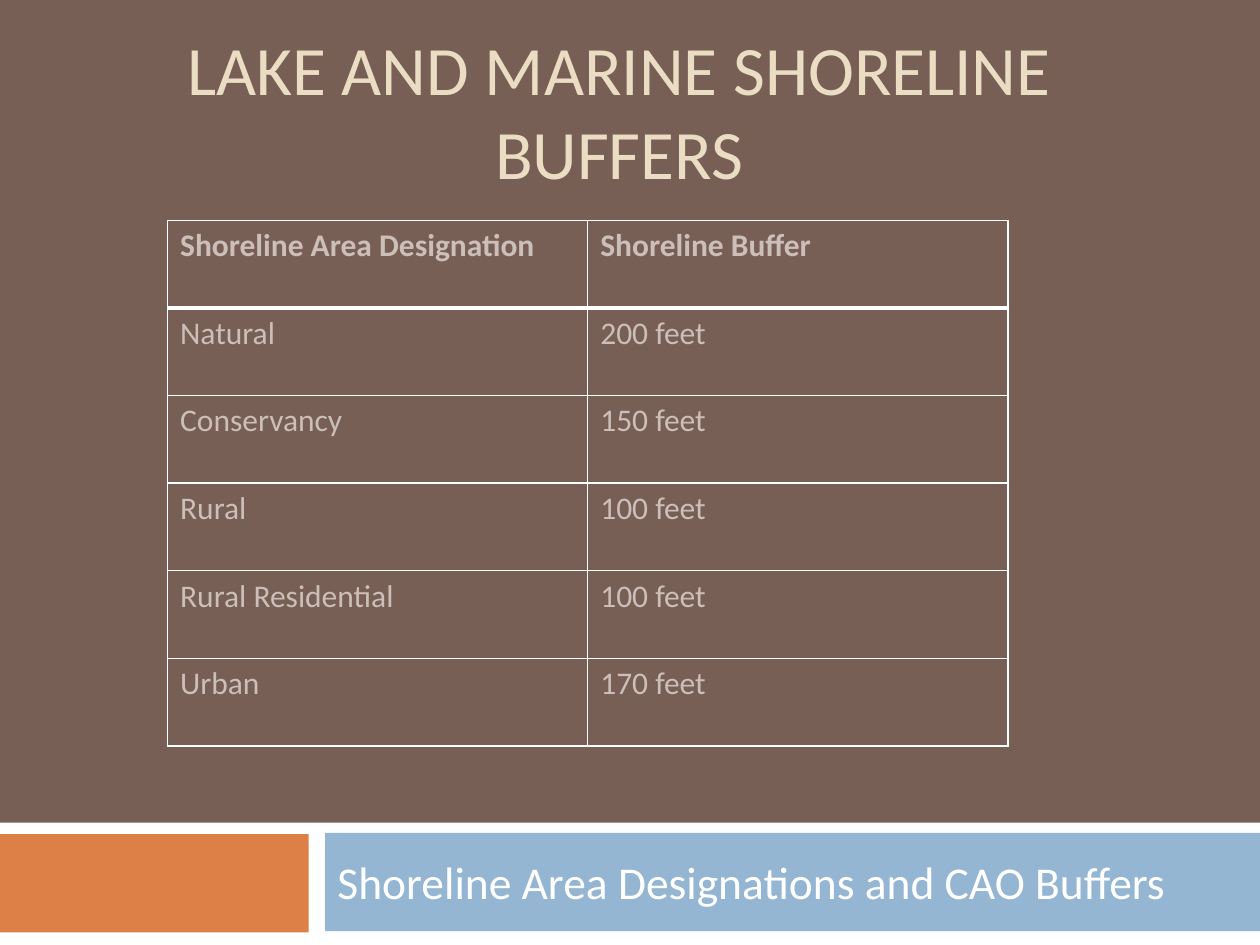
from lxml.etree import SubElement
from pptx import Presentation
from pptx.dml.color import RGBColor
from pptx.enum.shapes import MSO_SHAPE as Shape
from pptx.enum.text import MSO_ANCHOR as Anchor, PP_ALIGN as Align
from pptx.oxml.ns import qn
from pptx.util import Inches, Pt

WHITE = "FFFFFF"


def color(value):
    return RGBColor.from_string(value)


def write(frame, text, size, ink, bold=False):
    frame.word_wrap = True
    para = frame.paragraphs[0]
    para.text = text
    para.font.name = "Calibri"
    para.font.size = Pt(size)
    para.font.bold = bold
    para.font.color.rgb = color(ink)
    return para


deck = Presentation()
deck.slide_width, deck.slide_height = Inches(10), Inches(7.5)
page = deck.slides.add_slide(deck.slide_layouts[6])
page.background.fill.solid()
page.background.fill.fore_color.rgb = color("775F55")

bands = [
    (0, 6.53, 10, 0.97, WHITE),
    (-0.01, 6.62, 2.46, 0.78, "DD8047"),
    (2.58, 6.61, 7.42, 0.78, "94B6D2"),
]
for *place, paint in bands:
    band = page.shapes.add_shape(Shape.RECTANGLE, *map(Inches, place))
    band.shadow.inherit = False
    band.fill.solid()
    band.fill.fore_color.rgb = color(paint)
    band.line.fill.background()

title = page.shapes.add_textbox(*map(Inches, (0.5, 0.33, 8.83, 1.25)))
title.text_frame.vertical_anchor = Anchor.BOTTOM
para = write(title.text_frame, "LAKE AND MARINE SHORELINE BUFFERS", 39.6, "EBDDC3")
para.alignment = Align.CENTER

subtitle = page.shapes.add_textbox(*map(Inches, (2.58, 6.62, 7.33, 0.75)))
subtitle.text_frame.vertical_anchor = Anchor.MIDDLE
para = write(subtitle.text_frame, "Shoreline Area Designations and CAO Buffers", 26, WHITE)
para.space_before = Pt(7)

buffers = [
    ("Shoreline Area Designation", "Shoreline Buffer"),
    ("Natural", "200 feet"),
    ("Conservancy", "150 feet"),
    ("Rural", "100 feet"),
    ("Rural Residential", "100 feet"),
    ("Urban", "170 feet"),
]
place = map(Inches, (1.33, 1.75, 6.67, 4.17))
table = page.shapes.add_table(len(buffers), 2, *place).table
table.horz_banding = False
for row, texts in enumerate(buffers):
    for column, text in enumerate(texts):
        cell = table.cell(row, column)
        write(cell.text_frame, text, 18, "CCBEB8", bold=row == 0)
        properties = cell._tc.get_or_add_tcPr()
        for side in "LRTB":
            heavy = (row, side) in [(0, "B"), (1, "T")]
            border = SubElement(properties, qn(f"a:ln{side}"), w=str(Pt(3 if heavy else 1)))
            fill = SubElement(border, qn("a:solidFill"))
            SubElement(fill, qn("a:srgbClr"), val=WHITE)
        cell.fill.background()

deck.save("out.pptx")
